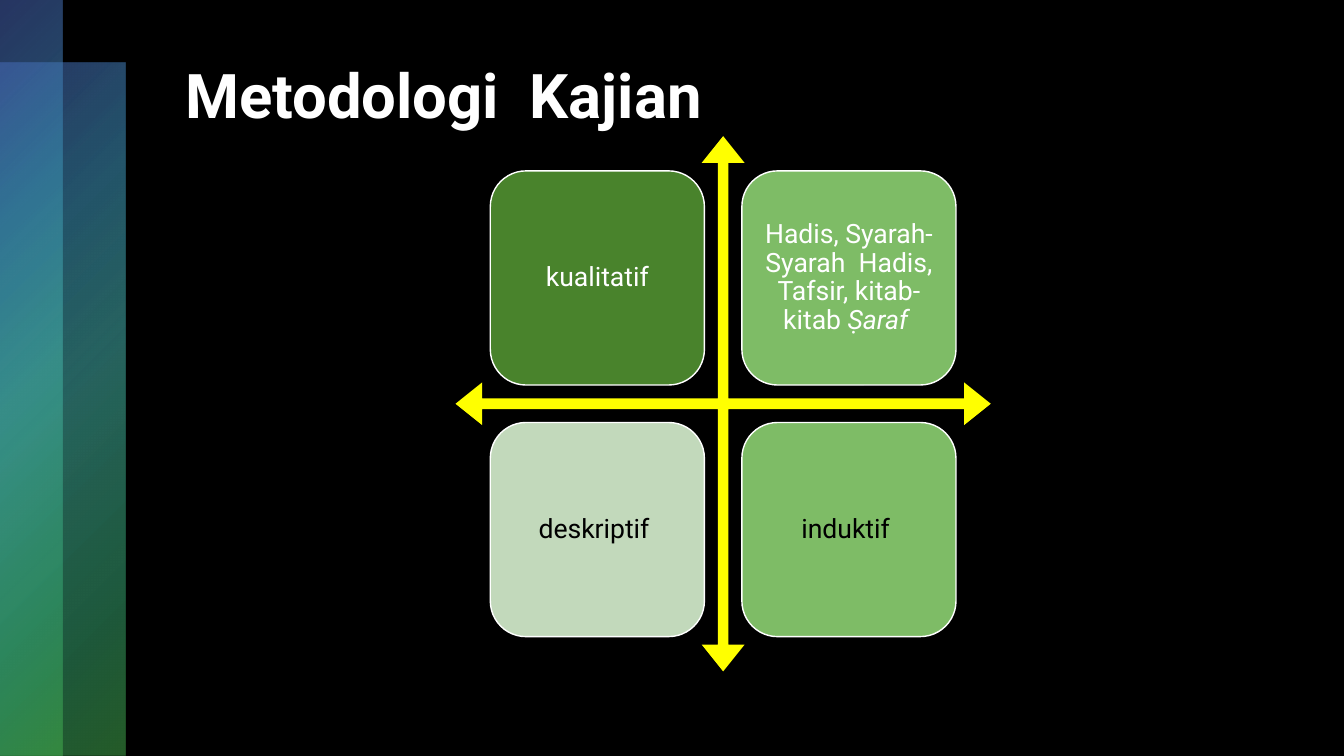
from lxml.etree import SubElement
from pptx import Presentation
from pptx.dml.color import RGBColor
from pptx.enum.shapes import MSO_SHAPE
from pptx.enum.text import MSO_ANCHOR, PP_ALIGN
from pptx.oxml.ns import qn
from pptx.util import Cm, Pt

COLORS = {"black": "000000", "white": "FFFFFF", "yellow": "FFFF00",
          "dark": "49832C", "mid": "7EBC66", "pale": "C2D9BB"}
BAND_STOPS = [(0, "4D6AC3", 50), (25, "3B8AB1", 60), (50, "46B3AA", 55),
              (81, "3BB176", 50), (99, "48B851", 50)]
TILES = [("kualitatif", "", "dark", "white"),
         ("Hadis, Syarah-Syarah  Hadis, Tafsir, kitab-kitab ", "Ṣaraf ", "mid", "white"),
         ("deskriptif ", "", "pale", "black"),
         ("induktif ", "", "mid", "black")]


def color(name):
    """Return the named colour."""
    return RGBColor.from_string(COLORS[name])


def add_run(p, text, size=19, fill="white", bold=False, italic=False):
    """Add a formatted run to a paragraph."""
    r = p.add_run()
    r.text = text
    r.font.name = "Roboto"
    r.font.size = Pt(size)
    r.font.bold = bold
    r.font.italic = italic
    r.font.color.rgb = color(fill)


def add_block(slide, kind, x, y, w, h, fill=None, line=None):
    """Add a preset shape measured in centimetres."""
    s = slide.shapes.add_shape(kind, Cm(x), Cm(y), Cm(w), Cm(h))
    s.shadow.inherit = False
    s.fill.background()
    s.line.fill.background()
    if fill:
        s.fill.solid()
        s.fill.fore_color.rgb = color(fill)
    if line:
        s.line.color.rgb = color(line)
        s.line.width = Pt(1)
    return s


def add_band(slide, x, y, w, h):
    """Add a translucent band with a radial gradient from its top left corner."""
    s = add_block(slide, MSO_SHAPE.RECTANGLE, x, y, w, h)
    spPr = s.fill._xPr
    old = spPr.find(qn("a:noFill"))
    grad = SubElement(spPr, qn("a:gradFill"), rotWithShape="1")
    spPr.replace(old, grad)
    stops = SubElement(grad, qn("a:gsLst"))
    for pos, rgb, alpha in BAND_STOPS:
        gs = SubElement(stops, qn("a:gs"), pos=str(pos * 1000))
        clr = SubElement(gs, qn("a:srgbClr"), val=rgb)
        SubElement(clr, qn("a:alpha"), val=str(alpha * 1000))
    route = SubElement(grad, qn("a:path"))
    route.set("path", "circle")
    SubElement(route, qn("a:fillToRect"), r="100000", b="100000")


def add_side(slide, x, y, w, h):
    """Add the two overlapping bands at the left edge."""
    step = w / 2
    add_band(slide, x, y + step, w, h - step)
    add_band(slide, x, y, step, h)


def add_title(slide, x, y, w, h):
    """Add the slide title."""
    tf = slide.shapes.add_textbox(Cm(x), Cm(y), Cm(w), Cm(h)).text_frame
    tf.word_wrap = True
    add_run(tf.paragraphs[0], "Metodologi  Kajian", size=44, bold=True)


def add_matrix(slide, x, y, size):
    """Add the four-way arrow and a tile in each quadrant."""
    arrow = add_block(slide, MSO_SHAPE.QUAD_ARROW, x, y, size, size, "yellow")
    for i, value in enumerate((0.02, 0.04, 0.05)):
        arrow.adjustments[i] = value
    tile, margin = size * 0.4, size * 0.065
    pitch = size - 2 * margin - tile
    for i, (text, term, fill, ink) in enumerate(TILES):
        row, col = divmod(i, 2)
        s = add_block(slide, MSO_SHAPE.ROUNDED_RECTANGLE, x + margin + col * pitch,
                      y + margin + row * pitch, tile, tile, fill, "white")
        tf = s.text_frame
        tf.word_wrap = True
        tf.vertical_anchor = MSO_ANCHOR.MIDDLE
        tf.margin_left = tf.margin_right = tf.margin_top = tf.margin_bottom = Cm(0.2)
        p = tf.paragraphs[0]
        p.alignment = PP_ALIGN.CENTER
        p.line_spacing = 0.9
        add_run(p, text, fill=ink)
        if term:
            add_run(p, term, fill=ink, italic=True)


def main():
    """Build and save the slide."""
    prs = Presentation()
    prs.slide_width, prs.slide_height = Cm(33.87), Cm(19.05)
    slide = prs.slides.add_slide(prs.slide_layouts[6])
    slide.background.fill.solid()
    slide.background.fill.fore_color.rgb = color("black")
    add_side(slide, 0, 0, 3.16, 19.05)
    add_title(slide, 4.42, 1.32, 26.34, 4.32)
    add_matrix(slide, 11.48, 3.43, 13.49)
    prs.save("out.pptx")


if __name__ == "__main__":
    main()
